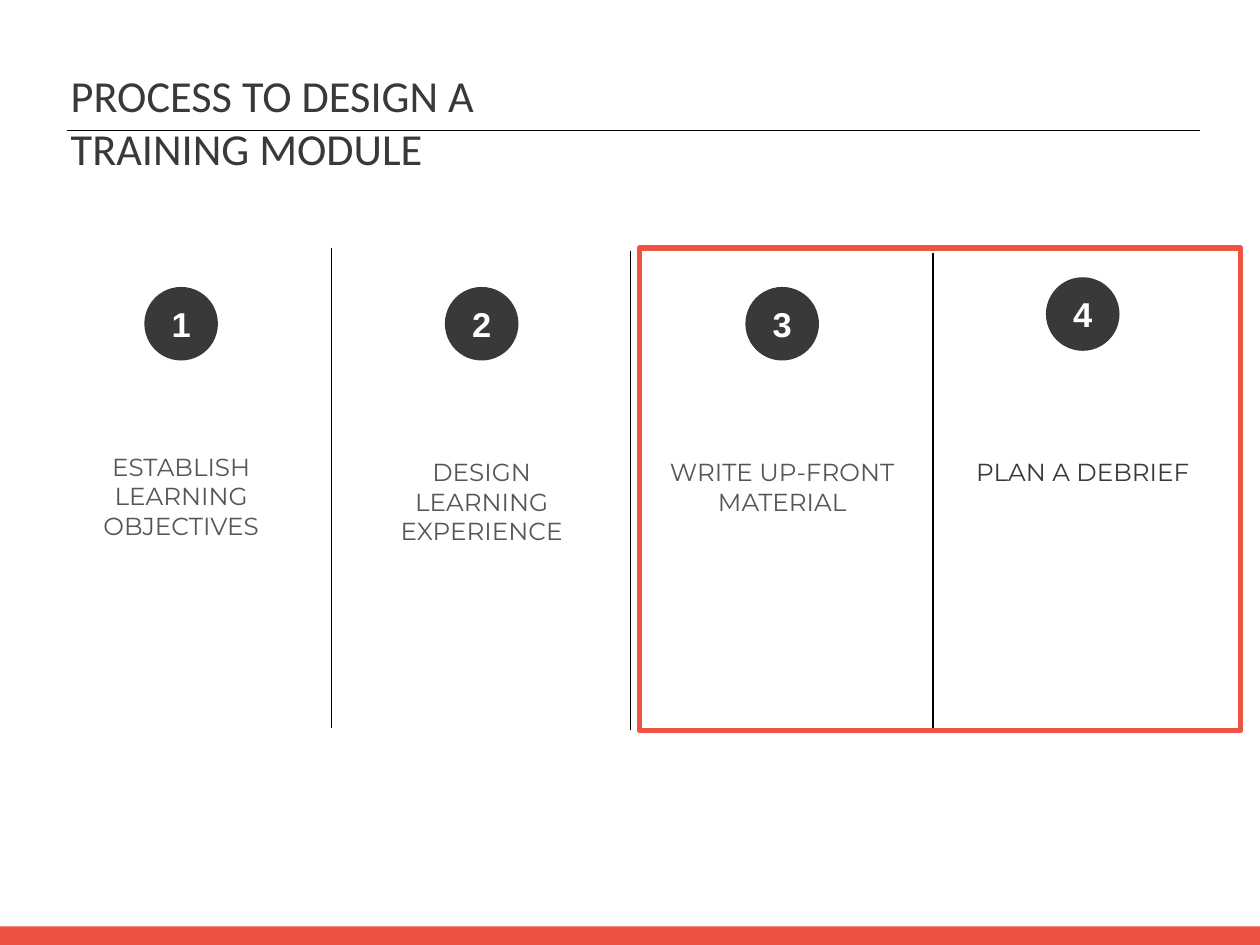
from lxml import etree
from pptx import Presentation
from pptx.dml.color import RGBColor
from pptx.enum import shapes as es, text as et
from pptx.oxml.ns import qn
from pptx.util import Pt

DARK, GREY, RED, BLACK, WHITE = "3B3838", "56565A", "ED5340", "000000", "FFFFFF"
WIDE, HIGH = 1023.84, 768.24
PITCH = 244.2
STEPS = [
    ("ESTABLISH LEARNING OBJECTIVES", GREY, 195, 233.3, 363.6),
    ("DESIGN LEARNING EXPERIENCE", GREY, 195, 233.3, 367.9),
    ("WRITE UP-FRONT MATERIAL", GREY, 217.4, 233.3, 367.9),
    ("PLAN A DEBRIEF", DARK, 217.4, 225.4, 367.9),
]
RULES = [(269.3, 201.6), (512.6, 203.8), (758.2, 205.9)]


def hue(code):
    """Return the colour for a hex string."""
    return RGBColor.from_string(code)


def rule(slide, x, y, x2, y2):
    """Draw a thin black line."""
    line = slide.shapes.add_connector(
        es.MSO_CONNECTOR.STRAIGHT, Pt(x), Pt(y), Pt(x2), Pt(y2))
    line.line.color.rgb = hue(BLACK)
    line.line.width = Pt(1)
    etree.SubElement(line._element.spPr, qn("a:effectLst"))


def shape(slide, kind, box, fill=None, edge=None):
    """Draw a flat shape with a fill, an edge or both."""
    item = slide.shapes.add_shape(kind, *map(Pt, box))
    item.shadow.inherit = False
    if fill:
        item.fill.solid()
        item.fill.fore_color.rgb = hue(fill)
    else:
        item.fill.background()
    if edge:
        item.line.color.rgb = hue(edge)
        item.line.width = Pt(4.5)
    else:
        item.line.fill.background()
    return item


def write(item, words, face, size, code, bold=False, align=et.PP_ALIGN.CENTER):
    """Put one run of text into a shape."""
    item.text_frame.word_wrap = True
    para = item.text_frame.paragraphs[0]
    para.alignment = align
    run = para.add_run()
    run.text = words
    run.font.name, run.font.size, run.font.bold = face, Pt(size), bold
    run.font.color.rgb = hue(code)


def title(slide, x, y, wide, high):
    """Place the heading and the rule that crosses it."""
    rule(slide, x + 4.3, y + 54, x + 924.5, y + 54)
    item = slide.shapes.add_textbox(Pt(x), Pt(y), Pt(wide), Pt(high))
    write(item, "PROCESS TO DESIGN A TRAINING MODULE", "Calibri", 36, DARK,
          align=et.PP_ALIGN.LEFT)


def step(slide, mid, num, words, code, wide, top, low):
    """Place one numbered step centred on mid."""
    size = 59.8
    disc = shape(slide, es.MSO_SHAPE.OVAL,
                 (mid - size / 2, top, size, size), DARK)
    disc.text_frame.vertical_anchor = et.MSO_ANCHOR.MIDDLE
    write(disc, str(num), "Arial", 28, WHITE, True)
    label = slide.shapes.add_textbox(
        Pt(mid - wide / 2), Pt(low), Pt(wide), Pt(80))
    write(label, words, "Montserrat", 20, code)


def steps(slide, x, y, wide, high):
    """Place the step columns, their dividers and the red frame."""
    for left, top in RULES:
        rule(slide, left, top, left, top + 390)
    for i, part in enumerate(STEPS):
        step(slide, x + PITCH * (i + 0.5), i + 1, *part)
    frame = 488.2
    shape(slide, es.MSO_SHAPE.RECTANGLE,
          (x + wide - frame, y, frame, high), edge=RED)


def main():
    """Build and save the slide."""
    deck = Presentation()
    deck.slide_width, deck.slide_height = Pt(WIDE), Pt(HIGH)
    slide = deck.slides.add_slide(deck.slide_layouts[6])
    shape(slide, es.MSO_SHAPE.RECTANGLE, (0, 753.1, 1026, 15.84), RED)
    title(slide, 50.4, 51.8, 467.3, 51.1)
    steps(slide, 25.1, 201.6, 982.9, 392.4)
    deck.save("out.pptx")


if __name__ == "__main__":
    main()
